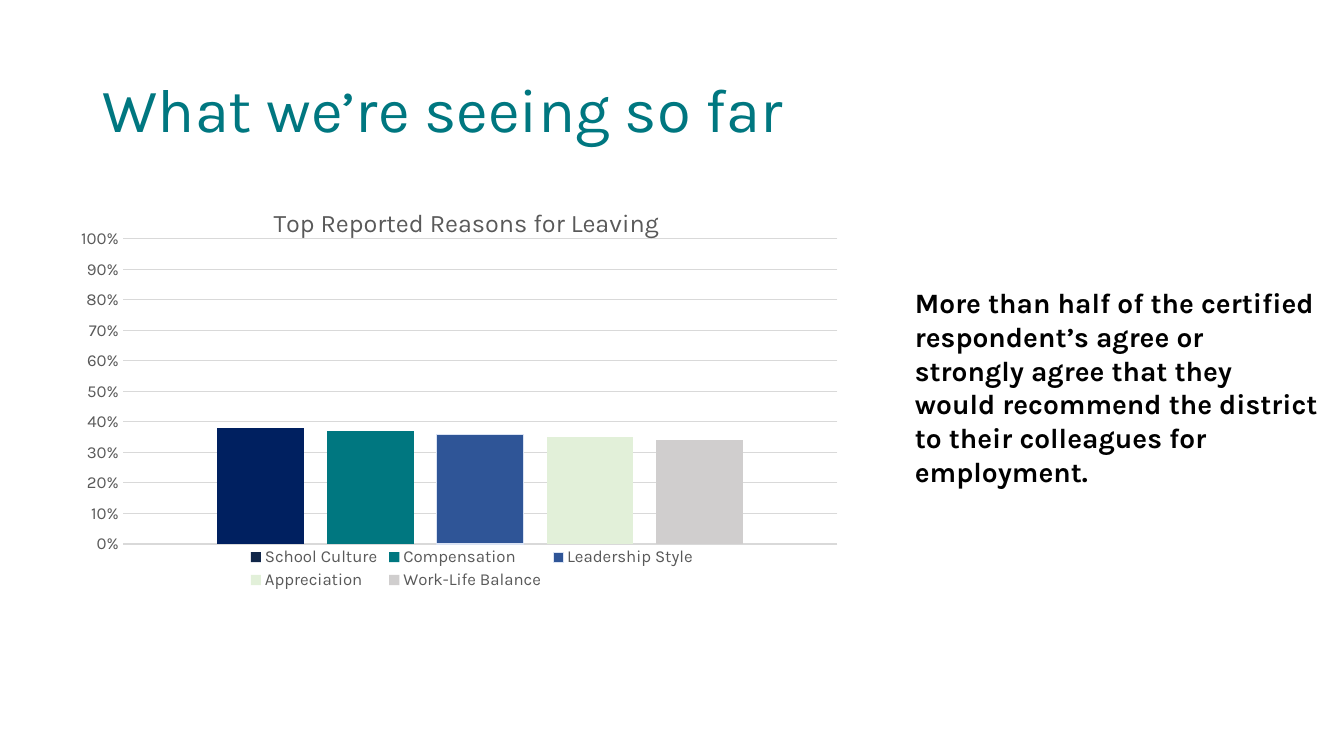
from lxml.etree import SubElement
from pptx import Presentation
from pptx.chart.data import CategoryChartData
from pptx.dml.color import RGBColor
from pptx.enum.chart import XL_CHART_TYPE, XL_LEGEND_POSITION, XL_TICK_MARK
from pptx.enum.text import MSO_ANCHOR
from pptx.oxml.ns import qn
from pptx.util import Emu, Pt

EMU_PER_PX = 914400 / 100.8
FONT = "Karla"
COLORS = {
    "black": "000000", "grey": "595959", "grid": "D9D9D9",
    "navy": "102649", "navy bar": "002060", "teal": "007780",
    "blue": "2F5597", "pale blue": "DAE3F3", "green": "E2F0D9",
    "silver": "D0CECE",
}
REASONS = [
    ("School Culture", 0.38, "navy"),
    ("Compensation", 0.37, "teal"),
    ("Leadership Style", 0.36, "blue"),
    ("Appreciation", 0.35, "green"),
    ("Work-Life Balance", 0.34, "silver"),
]


def px(length):
    return Emu(round(length * EMU_PER_PX))


def color(name):
    return RGBColor.from_string(COLORS[name])


def set_all(target, values):
    for name, value in values.items():
        setattr(target, name, value)


def set_font(font, size, color_name, bold=False):
    set_all(font, {"name": FONT, "size": Pt(size), "bold": bold})
    font.color.rgb = color(color_name)


def set_fill(part, color_name):
    part.format.fill.solid()
    part.format.fill.fore_color.rgb = color(color_name)


def set_line(line, color_name):
    line.color.rgb = color(color_name)
    line.width = Pt(0.75)


def add_text(slide, box, text, size, color_name, bold=False, spacing=1.0,
             anchor=MSO_ANCHOR.TOP):
    shape = slide.shapes.add_textbox(*map(px, box))
    set_all(shape.text_frame, {"word_wrap": True, "vertical_anchor": anchor})
    paragraph = shape.text_frame.paragraphs[0]
    paragraph.line_spacing = spacing
    run = paragraph.add_run()
    run.text = text
    set_font(run.font, size, color_name, bold)


def place_part(chart, tag, values):
    """Give a chart part a manual place, in fractions of the chart."""
    part = chart.element.find(".//" + qn(tag))
    for layout in part.findall(qn("c:layout")):
        part.remove(layout)
    layout = SubElement(part, qn("c:layout"))
    overlay = part.find(qn("c:overlay"))
    if overlay is None:
        part.insert(0, layout)
    else:
        overlay.addprevious(layout)
    manual = SubElement(layout, qn("c:manualLayout"))
    for name, value in values.items():
        SubElement(manual, qn("c:" + name)).set("val", str(value))


def add_reasons_chart(slide, box):
    data = CategoryChartData(number_format="0%")
    data.categories = ["1"]
    for name, value, _ in REASONS:
        data.add_series(name, [value])
    chart = slide.shapes.add_chart(
        XL_CHART_TYPE.COLUMN_CLUSTERED, *map(px, box), data).chart
    set_font(chart.font, 10, "black")

    # Title
    chart.has_title = True
    run = chart.chart_title.text_frame.paragraphs[0].add_run()
    run.text = "Top Reported Reasons for Leaving"
    set_font(run.font, 18, "grey")

    # Columns
    plot = chart.plots[0]
    set_all(plot, {"gap_width": 219, "overlap": -27, "vary_by_categories": False})
    for series, (_, _, color_name) in zip(plot.series, REASONS):
        set_fill(series, color_name)
    set_fill(plot.series[0].points[0], "navy bar")
    set_line(plot.series[2].format.line, "pale blue")

    # Axes
    chart.category_axis.visible = False
    axis = chart.value_axis
    set_all(axis, {
        "minimum_scale": 0, "maximum_scale": 1, "major_unit": 0.1,
        "major_tick_mark": XL_TICK_MARK.NONE,
        "minor_tick_mark": XL_TICK_MARK.NONE,
    })
    set_all(axis.tick_labels, {"number_format": "0%", "number_format_is_linked": False})
    set_font(axis.tick_labels.font, 12, "grey")
    axis.format.line.fill.background()
    set_line(axis.major_gridlines.format.line, "grid")

    # Legend
    chart.has_legend = True
    set_all(chart.legend, {"position": XL_LEGEND_POSITION.BOTTOM,
                           "include_in_layout": False})
    set_font(chart.legend.font, 12, "grey")

    # Places within the chart
    edges = {"xMode": "edge", "yMode": "edge"}
    place_part(chart, "c:title", {**edges, "x": 0.25, "y": 0.04})
    place_part(chart, "c:plotArea", {"layoutTarget": "inner", **edges,
                                     "x": 0.07, "y": 0.13, "w": 0.88, "h": 0.75})
    place_part(chart, "c:legend", {**edges, "x": 0.22, "y": 0.88, "w": 0.56, "h": 0.12})


def add_findings_slide(presentation):
    slide = presentation.slides.add_slide(presentation.slide_layouts[6])
    add_text(slide, (93, 40, 1159, 146), "What we’re seeing so far", 44, "teal",
             spacing=0.9, anchor=MSO_ANCHOR.MIDDLE)
    add_reasons_chart(slide, (66, 186, 812, 407))
    add_text(slide, (905, 281, 424, 179),
             "More than half of the certified respondent’s agree or strongly agree "
             "that they would recommend the district to their colleagues for "
             "employment.", 20, "black", bold=True)


def main():
    presentation = Presentation()
    set_all(presentation, {"slide_width": px(1344), "slide_height": px(756)})
    add_findings_slide(presentation)
    presentation.save("out.pptx")


if __name__ == "__main__":
    main()
